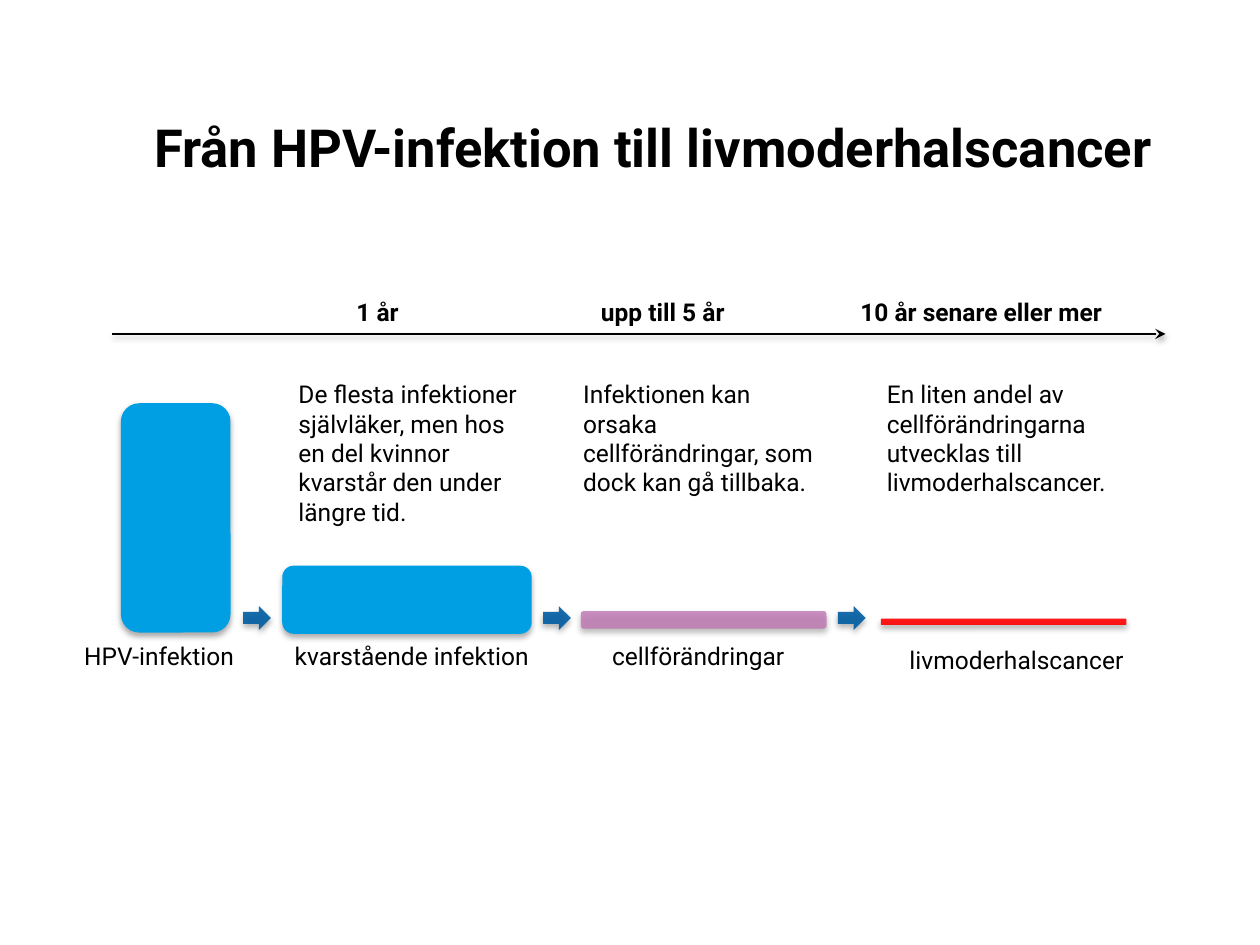
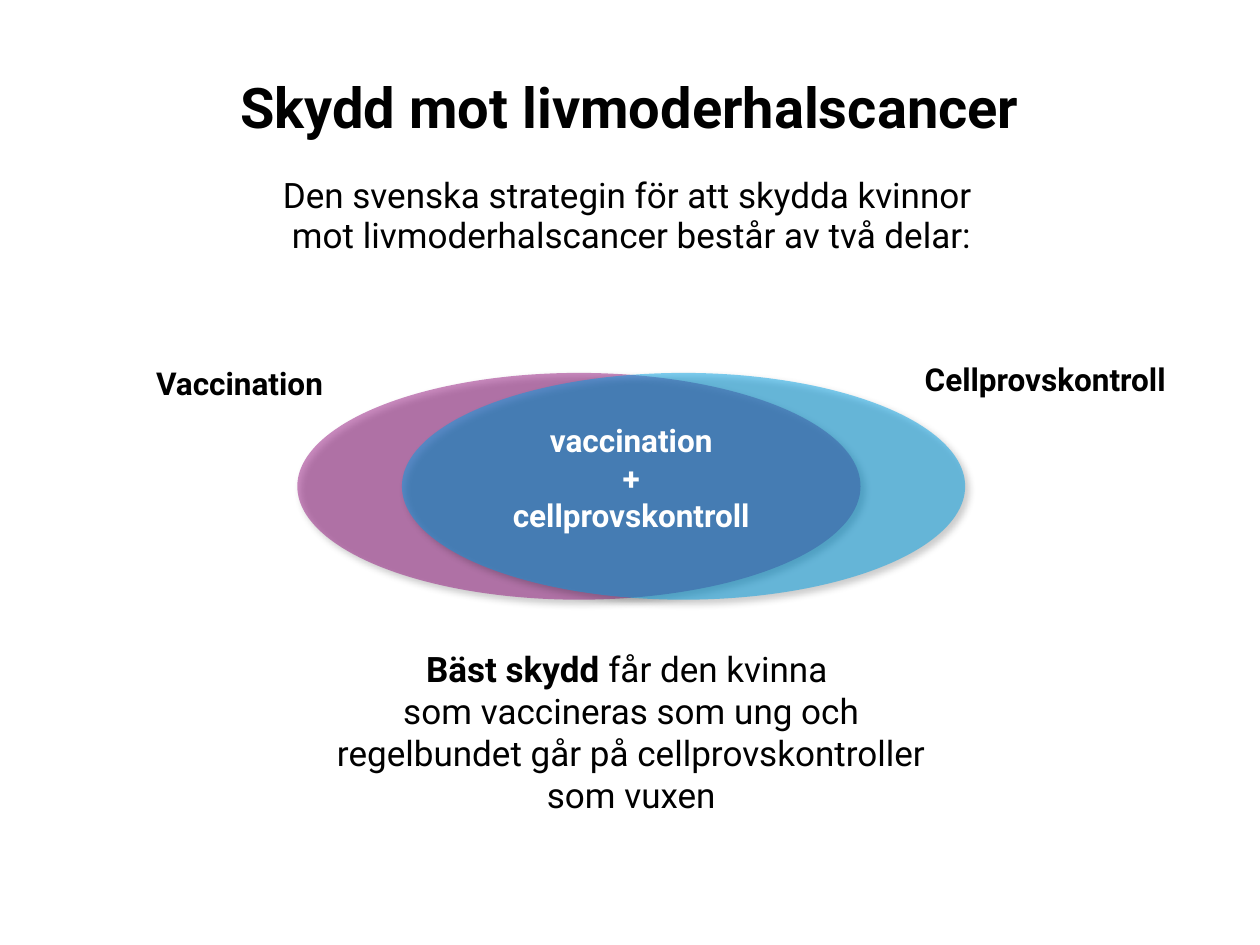
from dataclasses import dataclass

from lxml import etree
from pptx import Presentation
from pptx.dml.color import RGBColor
from pptx.enum.shapes import MSO_CONNECTOR, MSO_SHAPE
from pptx.enum.text import MSO_ANCHOR, PP_ALIGN
from pptx.oxml.ns import qn
from pptx.util import Inches, Pt

ROUNDED = MSO_SHAPE.ROUNDED_RECTANGLE
RIGHT_ARROW = MSO_SHAPE.RIGHT_ARROW
OVAL = MSO_SHAPE.OVAL
STRAIGHT = MSO_CONNECTOR.STRAIGHT
LEFT, CENTER = PP_ALIGN.LEFT, PP_ALIGN.CENTER
TOP, BOTTOM = MSO_ANCHOR.TOP, MSO_ANCHOR.BOTTOM


@dataclass(frozen=True)
class Theme:
    font: str = "Roboto"
    black: str = "000000"
    white: str = "FFFFFF"
    blue: str = "009FE3"
    navy: str = "005DA2"
    mauve: str = "BF76B3"
    purple: str = "951B81"
    red: str = "FF0000"
    label: int = 14
    heading: int = 18
    body: int = 20
    title_spacing: int = 34
    body_spacing: int = 23
    # Shadows: opacity %, blur pt, distance pt, direction in degrees
    line_shadow: tuple = (38, 3.1, 1.6, 90)
    bar_shadow: tuple = (32, 3.5, 2.2, 90)
    oval_shadow: tuple = (40, 4, 3, 45)


THEME = Theme()


# Formatting helpers
def add_alpha(color, percent):
    etree.SubElement(color, qn("a:alpha")).set("val", str(percent * 1000))


def add_shadow(sp, shadow):
    opacity, blur, distance, direction = shadow
    spPr = sp._element.spPr
    effects = spPr.find(qn("a:effectLst"))
    if effects is None:
        effects = etree.SubElement(spPr, qn("a:effectLst"))
    outer = etree.SubElement(effects, qn("a:outerShdw"))
    outer.set("blurRad", str(Pt(blur)))
    outer.set("dist", str(Pt(distance)))
    outer.set("dir", str(direction * 60000))
    outer.set("rotWithShape", "0")
    color = etree.SubElement(outer, qn("a:srgbClr"))
    color.set("val", THEME.black)
    add_alpha(color, opacity)


# Element builders
def add_text(s, box, text, size, bold=False, color=THEME.black, align=LEFT,
             anchor=TOP, spacing=None, inset=True, bold_lead=""):
    tf = s.shapes.add_textbox(*map(Inches, box)).text_frame
    tf.word_wrap = True
    tf.vertical_anchor = anchor
    if not inset:
        tf.margin_left = tf.margin_top = tf.margin_right = tf.margin_bottom = 0
    p = tf.paragraphs[0]
    p.text = text
    p.alignment = align
    if spacing:
        p.line_spacing = Pt(spacing)
    for r in p.runs:
        r.font.name = THEME.font
        r.font.size = Pt(size)
        r.font.bold = bold
        r.font.color.rgb = RGBColor.from_string(color)
    if bold_lead:
        first = p.runs[0]
        lead = p.add_run()
        lead.text = bold_lead
        lead.font.name = THEME.font
        lead.font.size = Pt(size)
        lead.font.bold = True
        lead.font.color.rgb = RGBColor.from_string(color)
        first._r.addprevious(lead._r)


def add_title(s, box, text, size):
    add_text(s, box, text, size, bold=True, align=CENTER, anchor=BOTTOM,
             spacing=THEME.title_spacing, inset=False)


def add_filled(s, kind, box, color, opacity, shadow):
    sp = s.shapes.add_shape(kind, *map(Inches, box))
    sp.fill.solid()
    sp.fill.fore_color.rgb = RGBColor.from_string(color)
    if opacity < 100:
        add_alpha(sp._element.spPr.find(".//" + qn("a:srgbClr")), opacity)
    sp.line.fill.background()
    sp.shadow.inherit = False
    add_shadow(sp, shadow)


def add_time_axis(s, x1, x2, y):
    axis = s.shapes.add_connector(STRAIGHT, Inches(x1), Inches(y), Inches(x2), Inches(y))
    axis.line.width = Pt(0.75)
    axis.line.color.rgb = RGBColor.from_string(THEME.black)
    etree.SubElement(axis.line._get_or_add_ln(), qn("a:tailEnd")).set("type", "stealth")
    add_shadow(axis, THEME.line_shadow)


# Slides
def build_infection_slide(s):
    add_title(s, (0.57, 0.41, 9.23, 1), "Från HPV-infektion till livmoderhalscancer", 30)
    add_time_axis(s, 0.89, 9.25, 2.65)

    # Times above the axis
    for x, width, time in [(2.73, 0.62, "1 år"), (4.67, 1.51, "upp till 5 år"),
                           (6.73, 2.46, "10 år senare eller mer")]:
        add_text(s, (x, 2.31, width, 0.34), time, THEME.label, bold=True)

    # Stage names
    for x, y, width, name in [(0.57, 5.04, 1.44, "HPV-infektion"),
                              (2.24, 5.04, 2.27, "kvarstående infektion"),
                              (4.76, 5.04, 1.58, "cellförändringar"),
                              (7.12, 5.07, 2.13, "livmoderhalscancer")]:
        add_text(s, (x, y, width, 0.34), name, THEME.label)

    # Bars that shrink from stage to stage, with arrows between them
    for box, color, opacity in [((0.96, 3.2, 0.87, 1.82), THEME.blue, 100),
                                ((2.24, 4.49, 1.98, 0.54), THEME.blue, 100),
                                ((4.61, 4.85, 1.95, 0.14), THEME.mauve, 80),
                                ((6.99, 4.91, 1.95, 0.05), THEME.red, 90)]:
        add_filled(s, ROUNDED, box, color, opacity, THEME.bar_shadow)
    for x in (1.93, 4.31, 6.65):
        add_filled(s, RIGHT_ARROW, (x, 4.81, 0.22, 0.19), THEME.navy, 90, THEME.bar_shadow)

    # Explanations below the axis
    for x, width, height, text in [
        (2.27, 2.02, 1.28, "De flesta infektioner självläker, men hos en del "
                           "kvinnor kvarstår den under längre tid."),
        (4.53, 2.16, 1.04, "Infektionen kan orsaka cellförändringar, "
                           "som dock kan gå tillbaka."),
        (6.94, 2.31, 1.04, "En liten andel av cellförändringarna utvecklas "
                           "till livmoderhalscancer."),
    ]:
        add_text(s, (x, 2.96, width, height), text, THEME.label)


def build_protection_slide(s):
    add_title(s, (1.1, 0.11, 7.8, 1), "Skydd mot livmoderhalscancer", 32)
    add_text(s, (0.78, 1.39, 8.47, 0.66),
             "Den svenska strategin för att skydda kvinnor \n"
             "mot livmoderhalscancer består av två delar:".replace("\n", "\v"),
             THEME.body, align=CENTER, spacing=THEME.body_spacing, inset=False)

    # Overlapping ovals
    for x, color, opacity in [(2.36, THEME.purple, 51), (3.19, THEME.blue, 50)]:
        add_filled(s, OVAL, (x, 2.96, 4.47, 1.8), color, opacity, THEME.oval_shadow)

    # Oval labels
    add_text(s, (1.14, 2.84, 1.88, 0.4), "Vaccination", THEME.heading, bold=True)
    add_text(s, (7.24, 2.81, 2.52, 0.4), "Cellprovskontroll", THEME.heading, bold=True)
    add_text(s, (3.82, 3.29, 2.38, 1.03), "vaccination\v+\vcellprovskontroll",
             THEME.heading, bold=True, color=THEME.white, align=CENTER)

    # Conclusion
    add_text(s, (2.36, 5.09, 5.3, 1.11),
             "får den kvinna \vsom vaccineras som ung och regelbundet går på "
             "cellprovskontroller som vuxen",
             THEME.body, align=CENTER, bold_lead="Bäst skydd ")


def main():
    prs = Presentation()
    prs.slide_width, prs.slide_height = Inches(10), Inches(7.5)
    blank = prs.slide_layouts[6]
    for build in (build_infection_slide, build_protection_slide):
        build(prs.slides.add_slide(blank))
    prs.save("out.pptx")


if __name__ == "__main__":
    main()
